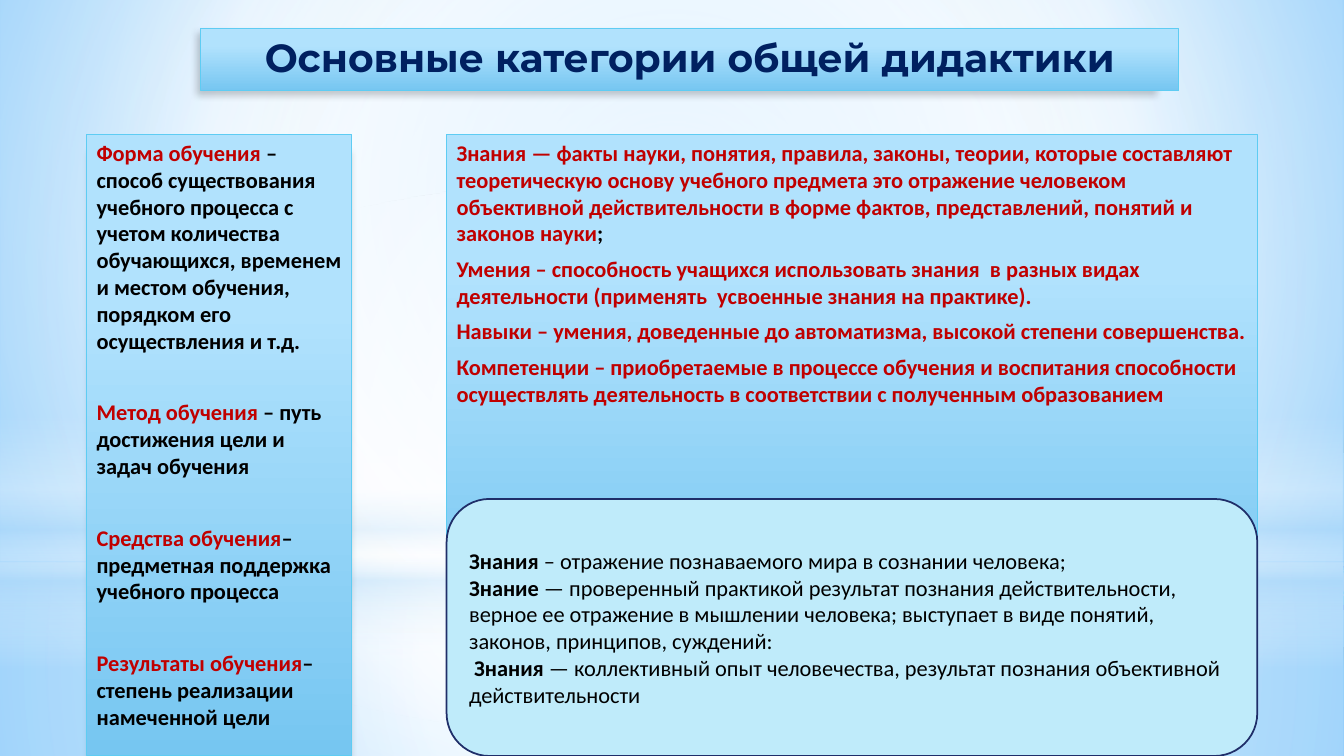
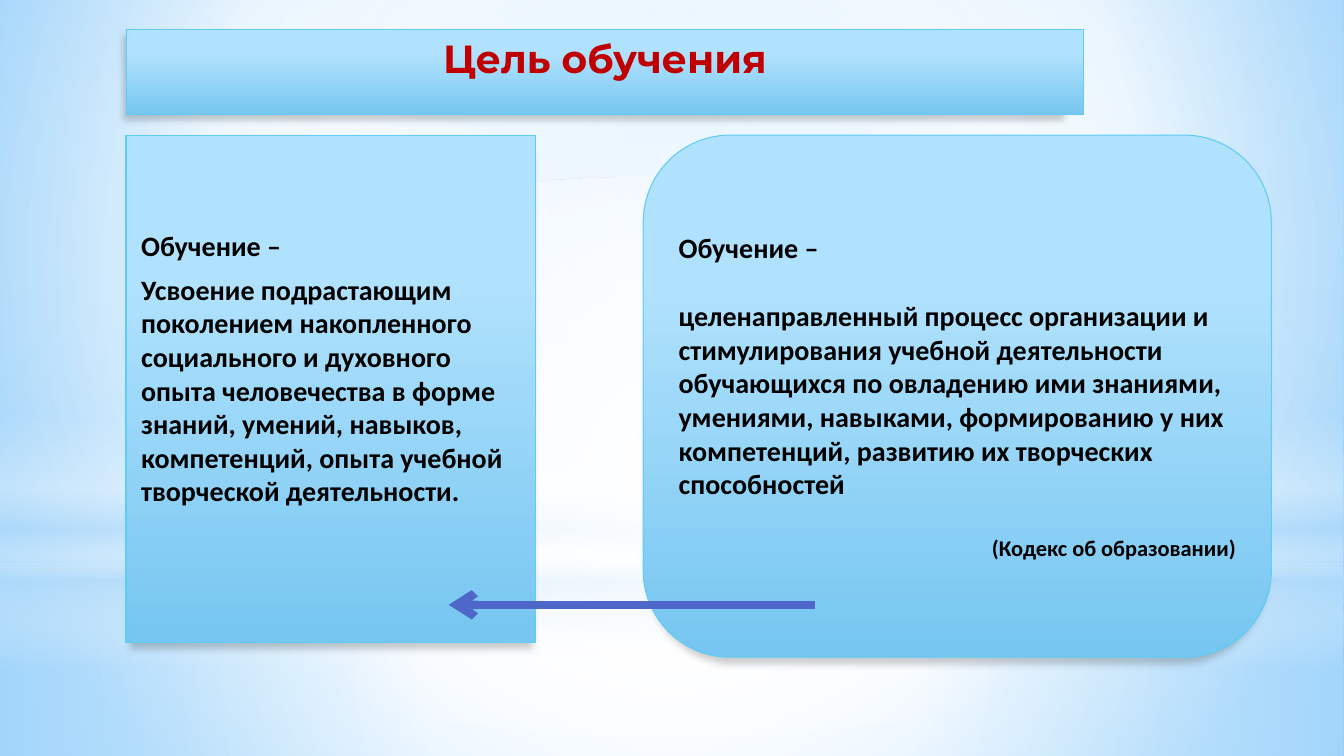
import pptx
import pptx.util
import pptx.dml.color
import pptx.enum.shapes
import pptx.enum.text
import pptx.oxml
import pptx.oxml.ns
from dataclasses import dataclass

Inches, Pt = pptx.util.Inches, pptx.util.Pt
Shape = pptx.enum.shapes.MSO_SHAPE
Anchor = pptx.enum.text.MSO_ANCHOR
Align = pptx.enum.text.PP_ALIGN
qn = pptx.oxml.ns.qn


@dataclass(frozen=True)
class Theme:
    """Colours, fonts and type sizes of the deck."""
    navy: str = "002060"
    red: str = "C00000"
    black: str = "000000"
    edge: str = "5ECCF3"
    pale: str = "BFEBFA"
    pale_edge: str = "1F2E69"
    arrow: str = "4E67C8"
    head_font: str = "Montserrat"
    body_font: str = "Calibri"
    title: int = 28
    large: int = 20
    body: int = 16
    panel: tuple = ((28, "B1E2FD", 100), (100, "76C6F1", 100))
    sky: tuple = ((0, "9ED5FF", 100), (60, "FFFFFF", 100), (100, "5BB9FF", 100))


T = Theme()
CENTRE = (50, 50, 50, 50)
WHITE, HAZE = "FFFFFF", "B4DCFA"
GAP, WIDE_GAP, BLANK_LINE = 3.2, 28.9, 24.4

BACKDROP = [
    (Shape.RECTANGLE, (0, 5.58, 13.33, 1.92),
     [(0, WHITE, 91), (37, WHITE, 76), (100, HAZE, 79)], CENTRE),
    (Shape.RECTANGLE, (0, 0, 13.33, 5.58),
     [(0, WHITE, 89), (48, WHITE, 62), (100, HAZE, 79)], CENTRE),
    (Shape.RECTANGLE, (0, 4.12, 13.33, 2.5),
     [(0, WHITE, 0), (29, WHITE, 30), (45, HAZE, 40), (55, WHITE, 26),
      (65, HAZE, 60), (100, WHITE, 0)], None),
    (Shape.OVAL, (0, 1.75, 13.33, 5.58), [(0, WHITE, 100), (56, WHITE, 0)], CENTRE),
]

TERMS = [
    ("Форма обучения ", "– способ существования учебного процесса с учетом количества "
     "обучающихся, временем и местом обучения, порядком его осуществления и т.д."),
    ("Метод обучения ", "– путь достижения цели и задач обучения"),
    ("Средства обучения", "– предметная поддержка учебного процесса"),
    ("Результаты обучения", "– степень реализации намеченной цели"),
]
RESULTS = [
    ("Знания — факты науки, понятия, правила, законы, теории, которые составляют "
     "теоретическую основу учебного предмета это отражение человеком объективной "
     "действительности в форме фактов, представлений, понятий и законов науки", ";"),
    ("Умения – способность учащихся использовать знания  в разных видах деятельности "
     "(применять  усвоенные знания на практике).",),
    ("Навыки – умения, доведенные до автоматизма, высокой степени совершенства.",),
    ("Компетенции – приобретаемые в процессе обучения и воспитания способности "
     "осуществлять деятельность в соответствии с полученным образованием",),
]
KNOWLEDGE = [
    ("Знания ", "– отражение познаваемого мира в сознании человека;"),
    ("Знание", " — проверенный практикой результат познания действительности, верное ее "
     "отражение в мышлении человека; выступает в виде понятий, законов, принципов, суждений:"),
    ("Знания ", "— коллективный опыт человечества, результат познания объективной "
     "действительности"),
]
LEARNING = [
    ("Обучение –",),
    ("Усвоение подрастающим поколением накопленного социального и духовного опыта "
     "человечества в форме знаний, умений, навыков, компетенций, опыта учебной "
     "творческой деятельности.",),
]
PROCESS = [
    ("Обучение –",),
    ("целенаправленный процесс организации и стимулирования учебной деятельности "
     "обучающихся по овладению ими знаниями, умениями, навыками, формированию у них "
     "компетенций, развитию их творческих способностей",),
    ("(Кодекс об образовании)",),
]

PLAIN = {"name": T.body_font, "size": Pt(T.body), "bold": True, "color": T.black}
RED = {**PLAIN, "color": T.red}
LIGHT = {**PLAIN, "bold": False}
LARGE = {**PLAIN, "size": Pt(T.large)}


def rgb(value):
    """Turn a hex string into a colour."""
    return pptx.dml.color.RGBColor.from_string(value)


def set_all(obj, values):
    """Set attributes from a dict."""
    for name, value in values.items():
        setattr(obj, name, value)


def place(sp, box):
    """Put a shape at left, top, width and height in inches."""
    set_all(sp, dict(zip(("left", "top", "width", "height"), map(Inches, box))))


def paint_gradient(fill, root, stops, focus=None):
    """Fill with a vertical gradient, or a circular one around a focus."""
    fill.gradient()
    gs = "".join(f'<a:gs pos="{pos * 1000}"><a:srgbClr val="{color}">'
                 f'<a:alpha val="{alpha * 1000}"/></a:srgbClr></a:gs>'
                 for pos, color, alpha in stops)
    way = '<a:lin ang="5400000" scaled="0"/>'
    if focus:
        sides = " ".join(f'{side}="{v * 1000}"' for side, v in zip("ltrb", focus))
        way = f'<a:path path="circle"><a:fillToRect {sides}/></a:path>'
    old = next(root.iter(qn("a:gradFill")))
    old.getparent().replace(old, pptx.oxml.parse_xml(
        f'<a:gradFill {pptx.oxml.ns.nsdecls("a")} rotWithShape="1">'
        f'<a:gsLst>{gs}</a:gsLst>{way}</a:gradFill>'))


def outline(sp, color, width):
    """Give a shape a solid line."""
    sp.line.color.rgb = rgb(color)
    sp.line.width = Pt(width)


def style_panel(sp):
    """Apply the blue panel fill, line and soft shadow."""
    paint_gradient(sp.fill, sp._element.spPr, T.panel)
    outline(sp, T.edge, 0.75)
    sp.shadow.inherit = False
    sp._element.spPr.find(qn("a:effectLst")).append(pptx.oxml.parse_xml(
        f'<a:outerShdw {pptx.oxml.ns.nsdecls("a")} blurRad="63500" dist="50800" '
        'dir="5400000" sx="98000" sy="98000" rotWithShape="0"><a:srgbClr val="000000">'
        '<a:alpha val="20000"/></a:srgbClr></a:outerShdw>'))


def write(sp, paragraphs, formats, before=0, after=0, anchor=Anchor.TOP, align=Align.LEFT):
    """Write paragraphs whose runs take the formats in turn."""
    tf = sp.text_frame
    set_all(tf, {"word_wrap": True, "vertical_anchor": anchor,
                 "auto_size": pptx.enum.text.MSO_AUTO_SIZE.NONE})
    for i, runs in enumerate(paragraphs):
        p = tf.add_paragraph() if i else tf.paragraphs[0]
        set_all(p, {"alignment": align, "space_before": Pt(before if i else 0),
                    "space_after": Pt(after)})
        for text, fmt in zip(runs, formats):
            r = p.add_run()
            r.text = text
            set_all(r.font, {k: v for k, v in fmt.items() if k != "color"})
            r.font.color.rgb = rgb(fmt["color"])
    return tf


def add_panel(s, box, kind=Shape.RECTANGLE):
    """Add a blue panel."""
    sp = s.shapes.add_shape(kind, *map(Inches, box))
    style_panel(sp)
    return sp


def add_titled_slide(prs, text, box, color):
    """Add a title-only slide with a panel behind its title."""
    s = prs.slides.add_slide(prs.slide_layouts[5])
    sp = s.shapes.title
    place(sp, box)
    style_panel(sp)
    fmt = {"name": T.head_font, "size": Pt(T.title), "bold": True, "color": color}
    write(sp, [(text,)], [fmt], align=Align.CENTER)
    return s


def build_backdrop(prs, s):
    """Put the sky and its light layers on the master."""
    master = prs.slide_master
    paint_gradient(master.background.fill, master._element, T.sky, (20, 10, 20, 60))
    for i, (kind, box, stops, focus) in enumerate(BACKDROP):
        sp = s.shapes.add_shape(kind, *map(Inches, box))
        paint_gradient(sp.fill, sp._element.spPr, stops, focus)
        sp.line.fill.background()
        sp.shadow.inherit = False
        sp._element.nvSpPr.cNvPr.set("id", str(20 + i))
        master.shapes._spTree.insert(2 + i, sp._element)


def build_categories(prs):
    """Build the slide of didactic categories."""
    s = add_titled_slide(prs, "Основные категории общей дидактики",
                         (1.99, 0.28, 9.7, 0.62), T.navy)
    build_backdrop(prs, s)
    write(add_panel(s, (0.86, 1.33, 2.63, 6.17)), TERMS, (RED, PLAIN), WIDE_GAP, 3)
    write(add_panel(s, (4.43, 1.33, 8.04, 4.93)), RESULTS, (RED, PLAIN), GAP, 3)
    sp = s.shapes.add_shape(Shape.ROUNDED_RECTANGLE, *map(Inches, (4.43, 4.95, 8.04, 2.55)))
    sp.fill.solid()
    sp.fill.fore_color.rgb = rgb(T.pale)
    outline(sp, T.pale_edge, 1.25)
    sp.shadow.inherit = False
    tf = write(sp, KNOWLEDGE, (PLAIN, LIGHT), anchor=Anchor.MIDDLE)
    tf.paragraphs[-1]._p.get_or_add_pPr().set("indent", str(Inches(0.05)))


def build_goal(prs):
    """Build the slide on the goal of learning."""
    s = add_titled_slide(prs, "Цель обучения", (1.25, 0.29, 9.5, 0.85), T.red)
    tf = write(add_panel(s, (1.25, 1.34, 4.06, 5.03)), LEARNING, [LARGE], 4, 3)
    set_all(tf, {"margin_left": Inches(0.15), "margin_top": Inches(0.93)})
    sp = add_panel(s, (6.38, 1.34, 6.23, 5.18), Shape.ROUNDED_RECTANGLE)
    tf = write(sp, PROCESS, [LARGE], BLANK_LINE, anchor=Anchor.MIDDLE)
    source = tf.paragraphs[-1]
    source.alignment = Align.RIGHT
    source.runs[0].font.size = Pt(T.body)
    arrow = s.shapes.add_connector(pptx.enum.shapes.MSO_CONNECTOR.STRAIGHT,
                                   *map(Inches, (8.08, 6, 4.45, 6)))
    outline(arrow, T.arrow, 6)
    ns = pptx.oxml.ns.nsdecls("a")
    arrow.line._get_or_add_ln().append(
        pptx.oxml.parse_xml(f'<a:tailEnd {ns} type="arrow"/>'))
    arrow._element.spPr.append(pptx.oxml.parse_xml(f"<a:effectLst {ns}/>"))


def main():
    """Build and save the deck."""
    prs = pptx.Presentation()
    set_all(prs, {"slide_width": Inches(13.33), "slide_height": Inches(7.5)})
    build_categories(prs)
    build_goal(prs)
    prs.save("out.pptx")


if __name__ == "__main__":
    main()
